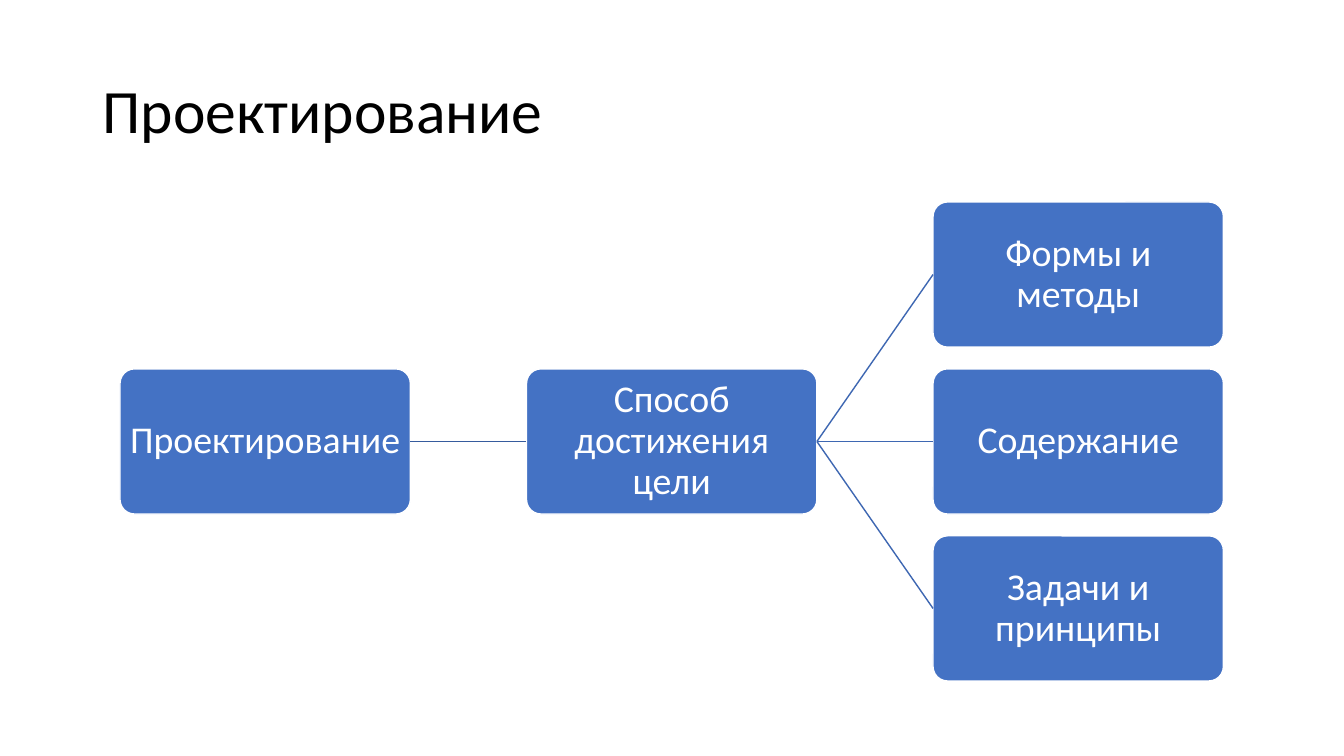
from lxml.etree import SubElement
from pptx import Presentation
from pptx.dml.color import RGBColor
from pptx.enum.shapes import MSO_CONNECTOR as CONNECTOR, MSO_SHAPE as SHAPE
from pptx.enum.text import MSO_ANCHOR as ANCHOR, PP_ALIGN as ALIGN
from pptx.oxml.ns import qn
from pptx.util import Inches, Pt

TITLE = "Проектирование"
NODES = {
    "root": ("Проектирование", 0, 0),
    "way": ("Способ достижения цели", 1, 0),
    "forms": ("Формы и методы", 2, -1),
    "content": ("Содержание", 2, 0),
    "tasks": ("Задачи и принципы", 2, 1),
}
LINKS = [
    ("root", "way", "365B9D"),
    ("way", "forms", "3E67B2"),
    ("way", "content", "3E67B2"),
    ("way", "tasks", "3E67B2"),
]
FONT = "Calibri"
LEFT, MIDDLE_TOP = 1.19, 3.66
WIDTH, HEIGHT = 2.88, 1.44
COLUMN_STEP, ROW_STEP = WIDTH * 1.4, HEIGHT * 1.15
RIGHT_SIDE, LEFT_SIDE = 3, 1


def color(value):
    return RGBColor.from_string(value)


def write(shape, text, size, text_color, align):
    frame = shape.text_frame
    frame.word_wrap = True
    frame.vertical_anchor = ANCHOR.MIDDLE
    frame.text = text
    paragraph = frame.paragraphs[0]
    paragraph.alignment = align
    paragraph.line_spacing = 0.9
    font = paragraph.runs[0].font
    font.name, font.size = FONT, Pt(size)
    font.color.rgb = color(text_color)


def add_node(slide, text, column, row):
    left = LEFT + column * COLUMN_STEP
    top = MIDDLE_TOP + row * ROW_STEP
    shape = slide.shapes.add_shape(
        SHAPE.ROUNDED_RECTANGLE, Inches(left), Inches(top), Inches(WIDTH), Inches(HEIGHT)
    )
    shape.adjustments[0] = 0.1
    shape.shadow.inherit = False
    shape.fill.solid()
    shape.fill.fore_color.rgb = color("4472C4")
    shape.line.color.rgb = color("FFFFFF")
    shape.line.width = Pt(1)
    frame = shape.text_frame
    frame.margin_left = frame.margin_right = Inches(0.02)
    frame.margin_top = frame.margin_bottom = Inches(0.02)
    write(shape, text, 27, "FFFFFF", ALIGN.CENTER)
    return shape


def add_link(slide, start, end, line_color):
    link = slide.shapes.add_connector(CONNECTOR.STRAIGHT, 0, 0, 0, 0)
    link.begin_connect(start, RIGHT_SIDE)
    link.end_connect(end, LEFT_SIDE)
    link.line.color.rgb = color(line_color)
    link.line.width = Pt(1)
    SubElement(link._element.spPr, qn("a:effectLst"))


def main():
    presentation = Presentation()
    presentation.slide_width, presentation.slide_height = Inches(13.33), Inches(7.5)
    slide = presentation.slides.add_slide(presentation.slide_layouts[6])
    title = slide.shapes.add_textbox(Inches(0.92), Inches(0.4), Inches(11.5), Inches(1.45))
    write(title, TITLE, 44, "000000", ALIGN.LEFT)
    shapes = {name: add_node(slide, *node) for name, node in NODES.items()}
    for start, end, line_color in LINKS:
        add_link(slide, shapes[start], shapes[end], line_color)
    presentation.save("out.pptx")


if __name__ == "__main__":
    main()
